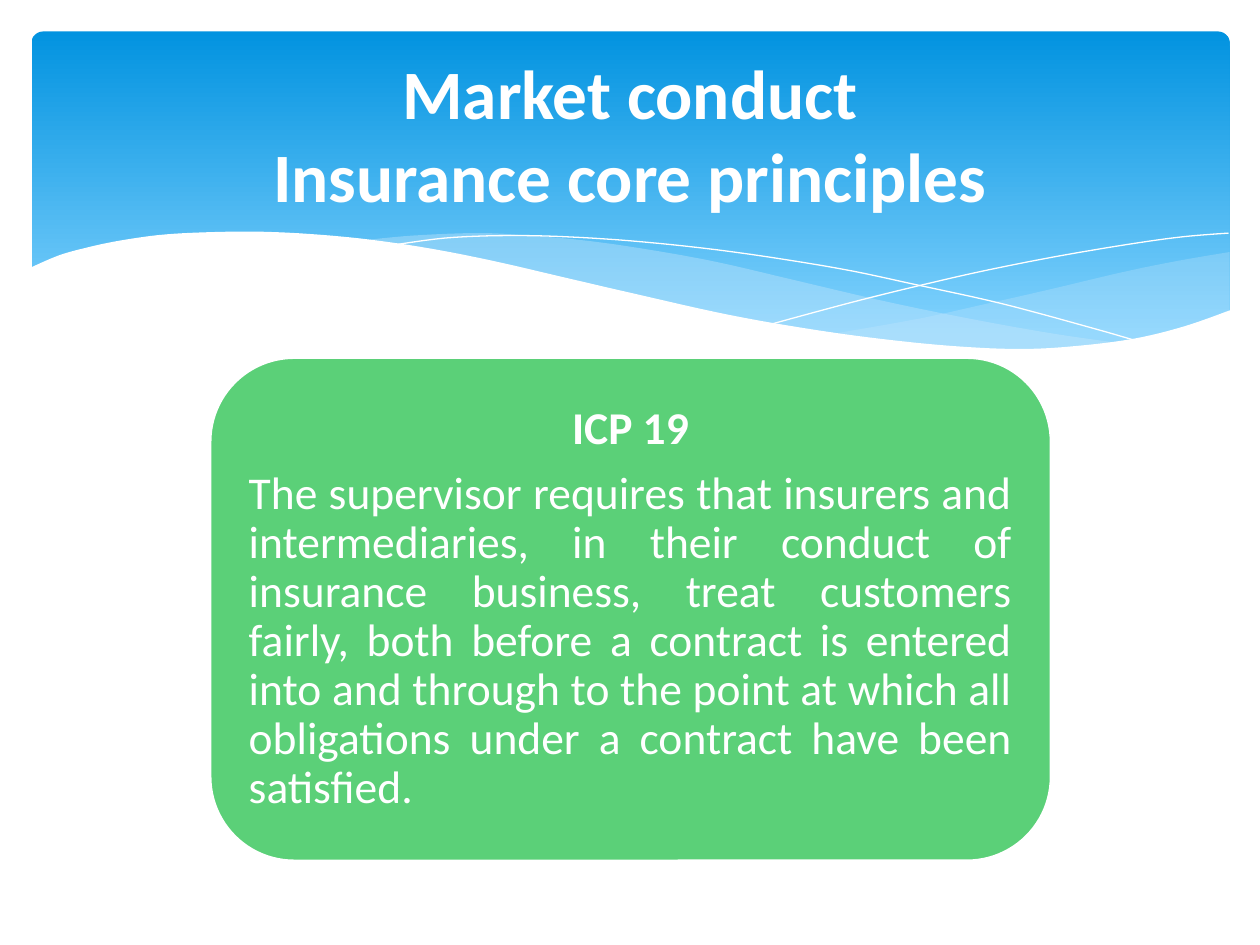
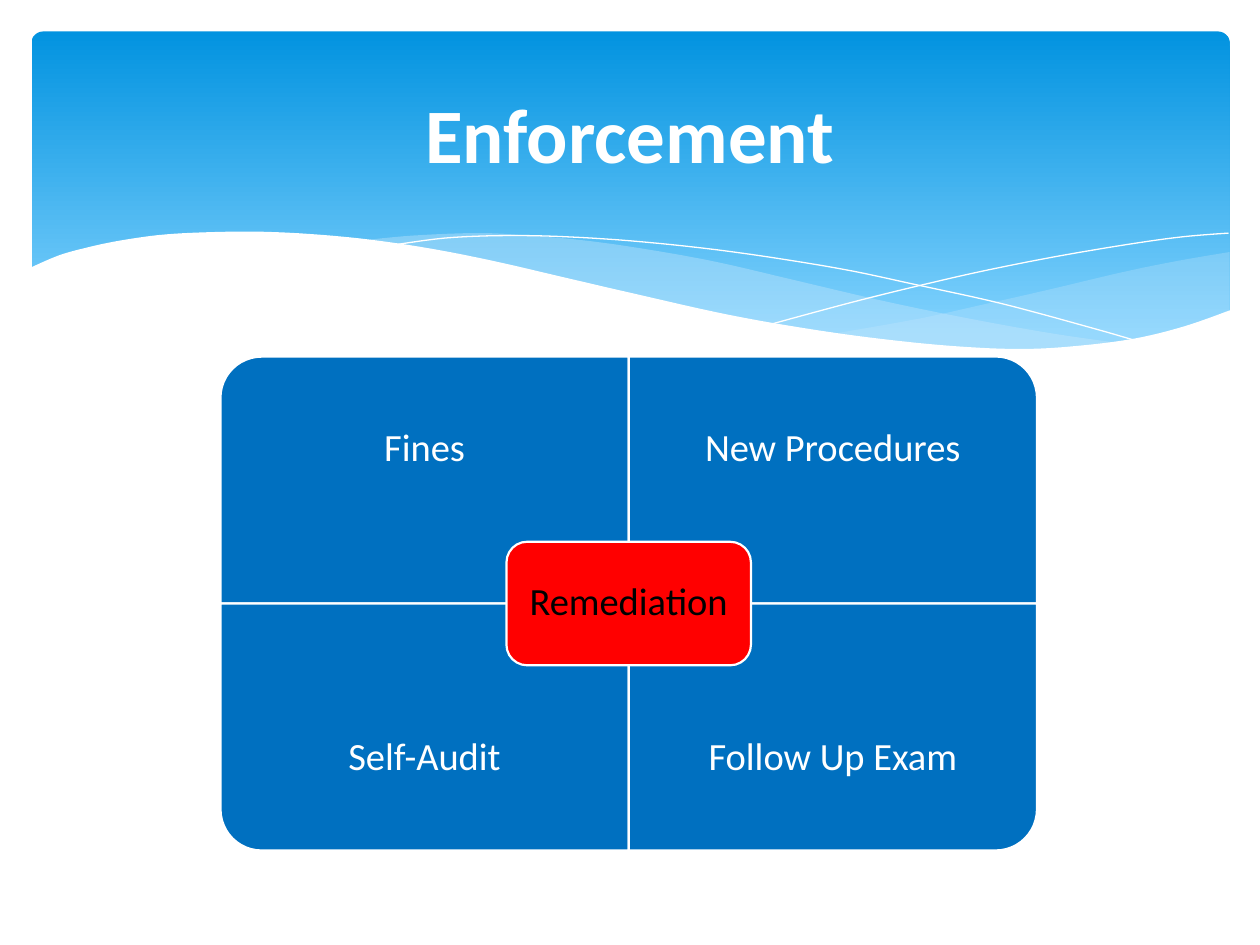
from dataclasses import dataclass

from lxml.etree import SubElement
from pptx import Presentation
from pptx.dml.color import RGBColor as Rgb
from pptx.enum.shapes import MSO_SHAPE as Shape
from pptx.enum.text import MSO_ANCHOR as Anchor, MSO_AUTO_SIZE as AutoSize, PP_ALIGN as Align
from pptx.oxml.ns import qn
from pptx.util import Inches, Pt


@dataclass(frozen=True)
class Theme:
    """Colours, font and type sizes shared by the slides."""

    font: str = "Calibri"
    white: Rgb = Rgb(0xFF, 0xFF, 0xFF)
    black: Rgb = Rgb(0, 0, 0)
    band_top: Rgb = Rgb(0x02, 0x93, 0xE0)
    band_bottom: Rgb = Rgb(0x83, 0xD3, 0xFE)
    swell: Rgb = Rgb(0xC6, 0xE7, 0xFC)
    green: Rgb = Rgb(0x5B, 0xD0, 0x78)
    blue: Rgb = Rgb(0x00, 0x70, 0xC0)
    red: Rgb = Rgb(0xFF, 0, 0)
    title: float = 44
    long_title: float = 39.6
    principle: float = 26
    measure: float = 22
    outline: float = 1.25


THEME = Theme()

RIGHT_SWELL_TOP = [(9.76, 2), (9.35, 2.07), (8.91, 2.16), (8.32, 2.3), (7.79, 2.42),
                   (7.29, 2.53), (6.61, 2.65)]
RIGHT_SWELL_BOTTOM = [(6.61, 2.65), (7.05, 2.71), (7.57, 2.76), (8.03, 2.78), (8.54, 2.76),
                      (8.97, 2.7), (9.35, 2.62), (9.76, 2.47)]
LEFT_SWELL_TOP = [(8.93, 2.73), (8.37, 2.65), (7.75, 2.54), (7.06, 2.4), (6.29, 2.22),
                  (5.69, 2.08), (5.14, 1.98), (4.65, 1.91), (4.2, 1.87), (3.8, 1.85),
                  (3.28, 1.87), (2.86, 1.91)]
LEFT_SWELL_BOTTOM = [(2.86, 1.91), (3.42, 1.99), (4.04, 2.11), (4.49, 2.22), (5.3, 2.4),
                     (6.01, 2.55), (6.65, 2.66), (7.22, 2.74), (7.85, 2.78), (8.38, 2.78),
                     (8.93, 2.73)]
FALLING_LINE = [(3.09, 1.95), (3.53, 1.89), (4.01, 1.87), (4.5, 1.88), (5.1, 1.92),
                (5.82, 2), (6.65, 2.13), (7.27, 2.26), (7.95, 2.41), (8.69, 2.61), (9.07, 2.72)]
RISING_LINE = [(6.13, 2.57), (6.72, 2.41), (7.2, 2.29), (7.76, 2.16), (8.36, 2.04),
               (8.95, 1.94), (9.38, 1.88), (9.75, 1.85)]
PAGE_EDGE = [(9.77, 2.46), (9.4, 2.59), (8.99, 2.69), (8.5, 2.75), (8.09, 2.77), (7.61, 2.75),
             (7.08, 2.7), (6.48, 2.62), (5.79, 2.5), (5.03, 2.33), (4.47, 2.2), (3.91, 2.07),
             (3.4, 1.97), (2.92, 1.9), (2.5, 1.86), (2.11, 1.84), (1.77, 1.84), (1.32, 1.86),
             (0.95, 1.91), (0.67, 1.97), (0.46, 2.03), (0.23, 2.13)]


def smooth(knots, steps=6):
    """Return points on a Catmull-Rom curve through the knots."""
    padded = [knots[0], *knots, knots[-1]]
    curve = [knots[0]]
    for a, b, c, d in zip(padded, padded[1:], padded[2:], padded[3:]):
        for step in range(1, steps + 1):
            t = step / steps
            curve.append(tuple(
                q + t / 2 * (r - p + t * (2 * p - 5 * q + 4 * r - s + t * (3 * (q - r) + s - p)))
                for p, q, r, s in zip(a, b, c, d)))
    return curve


def add_path(slide, points, close):
    """Add a shadowless freeform through points given in inches."""
    start, *rest = [(Inches(x), Inches(y)) for x, y in points]
    builder = slide.shapes.build_freeform(*start)
    builder.add_line_segments(rest, close=close)
    path = builder.convert_to_shape()
    path.shadow.inherit = False
    return path


def add_area(slide, points, colour, opacity=100):
    """Add a filled outline with the given opacity in percent."""
    area = add_path(slide, points, True)
    area.fill.solid()
    area.fill.fore_color.rgb = colour
    area.line.fill.background()
    if opacity < 100:
        tint = area._element.spPr.find(".//" + qn("a:srgbClr"))
        SubElement(tint, qn("a:alpha"), val=str(opacity * 1000))


def add_hairline(slide, knots):
    """Add a thin white curve."""
    hairline = add_path(slide, smooth(knots), False)
    hairline.fill.background()
    hairline.line.color.rgb = THEME.white
    hairline.line.width = Pt(0)


def add_wave_band(slide):
    """Draw the gradient title band with its wavy lower edge."""
    band = slide.shapes.add_shape(Shape.ROUNDED_RECTANGLE, Inches(0.25), Inches(0.25),
                                  Inches(9.51), Inches(2.7))
    band.adjustments[0] = 0.034
    band.shadow.inherit = False
    band.line.fill.background()
    band.fill.gradient()
    band.fill.gradient_angle = 270
    stops = ((0, THEME.band_top), (0.9, THEME.band_bottom))
    for stop, (position, colour) in zip(band.fill.gradient_stops, stops):
        stop.position = position
        stop.color.rgb = colour
    add_area(slide, smooth(RIGHT_SWELL_TOP) + smooth(RIGHT_SWELL_BOTTOM), THEME.swell, 29)
    add_area(slide, smooth(LEFT_SWELL_TOP) + smooth(LEFT_SWELL_BOTTOM), THEME.swell, 40)
    add_hairline(slide, FALLING_LINE)
    add_hairline(slide, RISING_LINE)
    add_area(slide, smooth(PAGE_EDGE) + [(0.23, 3.29), (9.77, 3.29)], THEME.white)


def add_run(paragraph, text, size, colour=THEME.white, bold=False):
    """Append one formatted run."""
    run = paragraph.add_run()
    run.text = text
    run.font.name = THEME.font
    run.font.size = Pt(size)
    run.font.bold = bold
    run.font.color.rgb = colour


def add_titled_slide(deck, lines, size):
    """Add a slide with the wave band and a title in front of it."""
    slide = deck.slides.add_slide(deck.slide_layouts[5])
    add_wave_band(slide)
    title = slide.shapes.title
    title.left, title.top = Inches(0.5), Inches(0.37)
    title.width, title.height = Inches(9), Inches(1.37)
    frame = title.text_frame
    frame.auto_size = AutoSize.NONE
    frame.vertical_anchor = Anchor.MIDDLE
    heading = frame.paragraphs[0]
    heading.alignment = Align.CENTER
    for index, line in enumerate(lines):
        if index:
            heading.add_line_break()
        add_run(heading, line, size, bold=True)
    slide.shapes._spTree.append(title._element)
    return slide


def add_block(slide, preset, left, top, width, height, colour, rotation=0):
    """Add a filled preset shape with a white outline."""
    block = slide.shapes.add_shape(preset, Inches(left), Inches(top),
                                   Inches(width), Inches(height))
    block.rotation = rotation
    block.shadow.inherit = False
    block.fill.solid()
    block.fill.fore_color.rgb = colour
    block.line.color.rgb = THEME.white
    block.line.width = Pt(THEME.outline)
    return block


def write(holder, inset, paragraphs, size, colour=THEME.white):
    """Fill a holder with (text, alignment, bold) paragraphs."""
    frame = holder.text_frame
    frame.word_wrap = True
    frame.vertical_anchor = Anchor.MIDDLE
    frame.margin_left = frame.margin_right = Inches(inset)
    frame.margin_top = frame.margin_bottom = Inches(inset)
    for index, (text, alignment, bold) in enumerate(paragraphs):
        paragraph = frame.add_paragraph() if index else frame.paragraphs[0]
        paragraph.alignment = alignment
        paragraph.line_spacing = 0.9
        paragraph.space_after = Pt(round(size * 0.35))
        add_run(paragraph, text, size, colour, bold)


def add_quadrant(slide, label, column, row, rotation):
    """Add one outer quarter of the matrix, its round corner facing outwards."""
    width, height, label_height = 3.24, 1.96, 1.47
    left, top = 1.75 + column * width, 2.83 + row * height
    wide, tall = (height, width) if rotation % 180 else (width, height)
    add_block(slide, Shape.ROUND_1_RECTANGLE, left + (width - wide) / 2,
              top + (height - tall) / 2, wide, tall, THEME.blue, rotation)
    caption = slide.shapes.add_textbox(Inches(left), Inches(top + row * (height - label_height)),
                                       Inches(width), Inches(label_height))
    write(caption, 0.17, [(label, Align.CENTER, False)], THEME.measure)


def build_principle(deck):
    """Build the slide quoting the core principle."""
    slide = add_titled_slide(deck, ["Market conduct", "Insurance core principles"],
                             THEME.long_title)
    card = add_block(slide, Shape.ROUNDED_RECTANGLE, 1.67, 2.84, 6.67, 3.99, THEME.green)
    write(card, 0.11, [
        ("ICP 19", Align.CENTER, True),
        ("The supervisor requires that insurers and intermediaries, in their conduct of "
         "insurance business, treat customers fairly, both before a contract is entered into "
         "and through to the point at which all obligations under a contract have been "
         "satisfied.", Align.JUSTIFY, False),
    ], THEME.principle)


def build_enforcement(deck):
    """Build the slide with the enforcement matrix."""
    slide = add_titled_slide(deck, ["Enforcement"], THEME.title)
    measures = [("Fines", 0, 0, 270), ("New Procedures", 1, 0, 0),
                ("Self-Audit", 0, 1, 180), ("Follow Up Exam", 1, 1, 90)]
    for measure in measures:
        add_quadrant(slide, *measure)
    remedy = add_block(slide, Shape.ROUNDED_RECTANGLE, 4.02, 4.3, 1.94, 0.98, THEME.red)
    write(remedy, 0.09, [("Remediation", Align.CENTER, False)], THEME.measure, THEME.black)


def main():
    """Build and save the deck."""
    deck = Presentation()
    deck.slide_width, deck.slide_height = Inches(10), Inches(7.5)
    build_principle(deck)
    build_enforcement(deck)
    deck.save("out.pptx")


if __name__ == "__main__":
    main()
